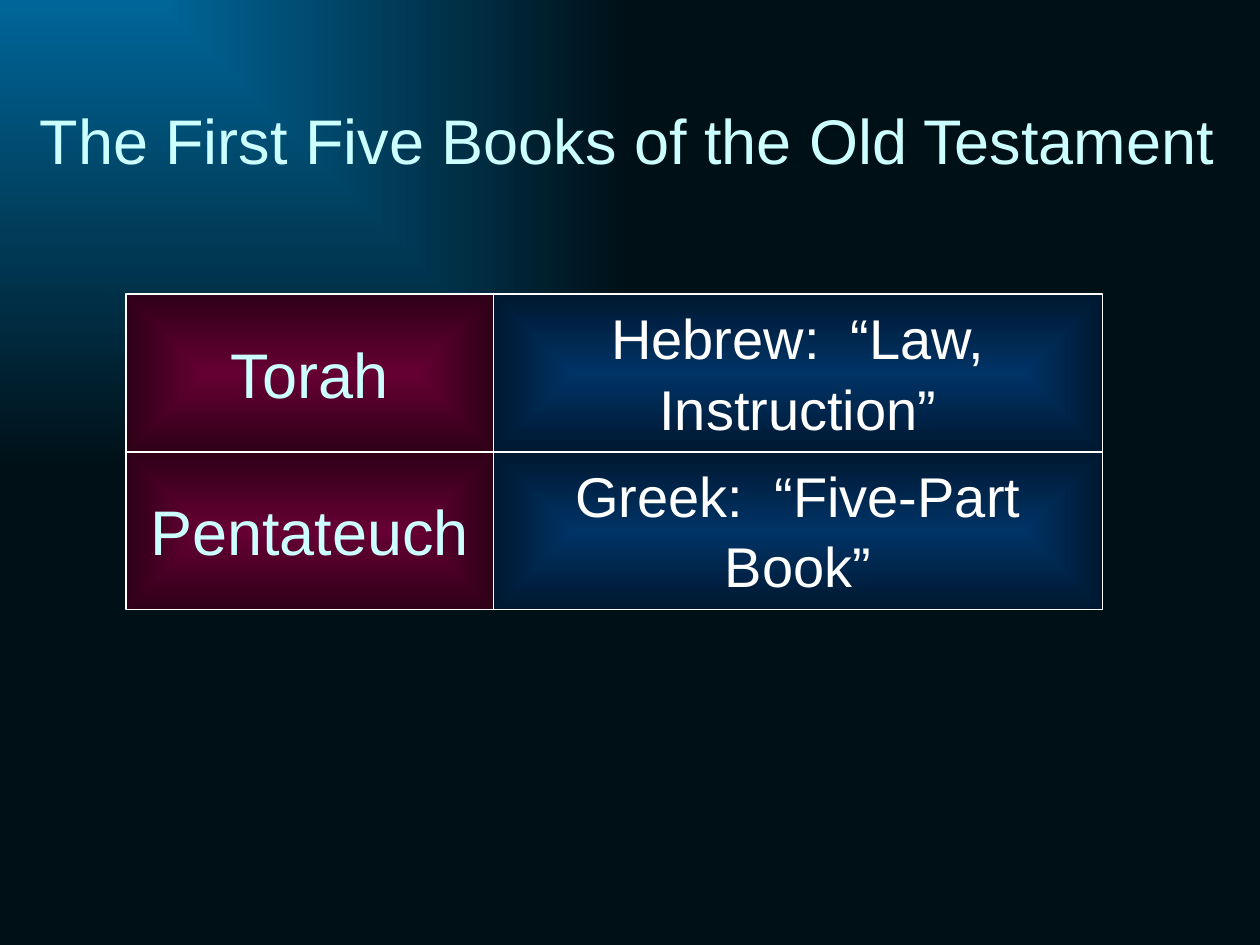
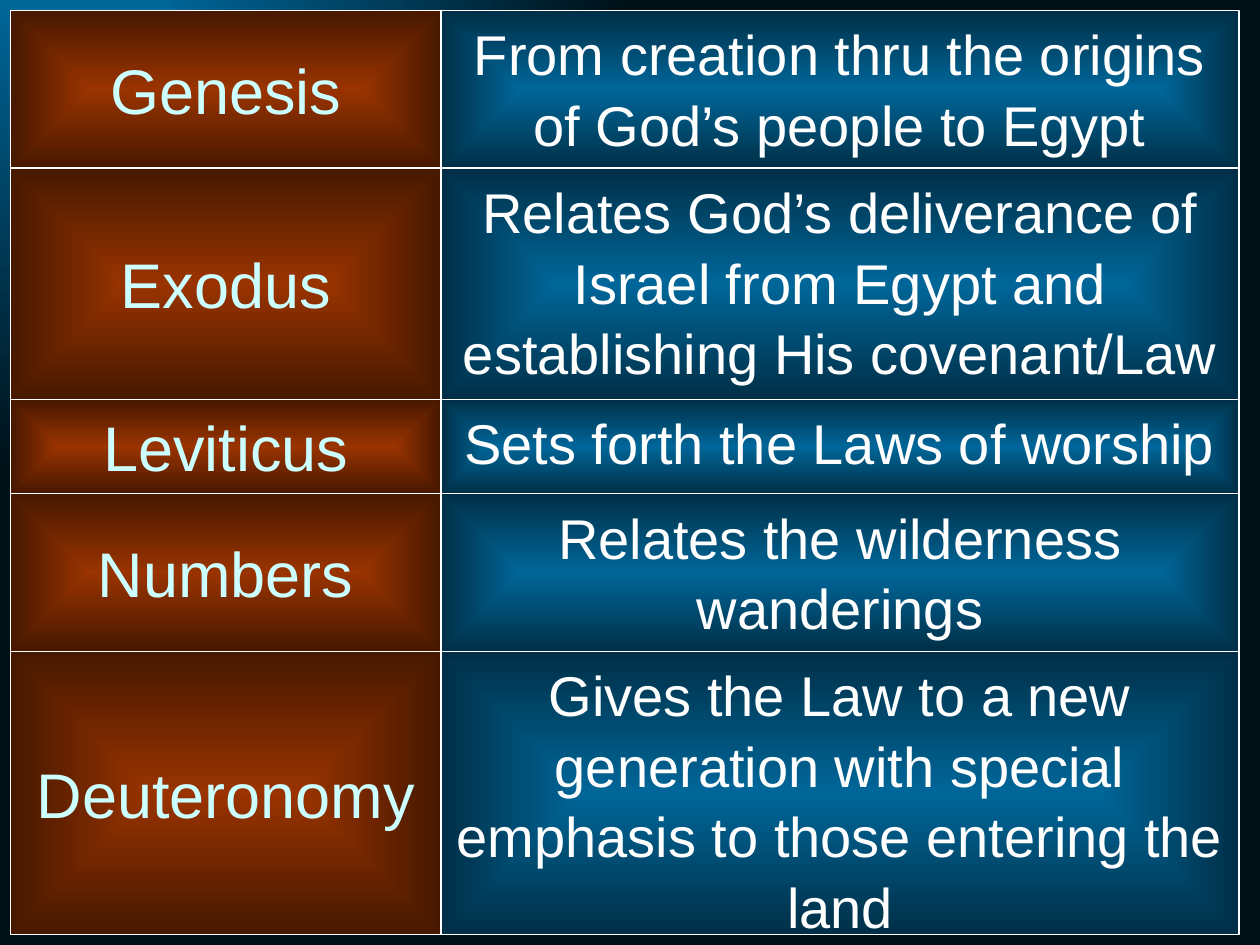
from lxml.etree import SubElement
from pptx import Presentation
from pptx.dml.color import RGBColor
from pptx.enum.shapes import MSO_SHAPE
from pptx.enum.text import MSO_ANCHOR, MSO_AUTO_SIZE, PP_ALIGN
from pptx.oxml.ns import qn
from pptx.util import Cm, Pt

TITLE_ONLY, BLANK = 5, 6
BACKGROUND = ("006699", "001017")
MAROON = ("660033", "2F0018")
NAVY = ("003366", "001830")
RUST = ("993300", "471800")
BLUE = ("006699", "002F47")
LINE_COLOR = "FFFFFF"

TERM_STYLE = {"size": Pt(36), "color": "CCFFFF", "anchor": MSO_ANCHOR.MIDDLE, "spacing": 1.0}
MEANING_STYLE = {"size": Pt(32), "color": "FFFFFF", "anchor": MSO_ANCHOR.TOP, "spacing": 1.05}

TERMS = [
    ("Torah", "Hebrew:  “Law, Instruction”", 3.18),
    ("Pentateuch", "Greek:  “Five-Part Book”", 3.18),
]
BOOKS = [
    ("Genesis", "From creation thru the origins of God’s people to Egypt", 3.18),
    ("Exodus", "Relates God’s deliverance of Israel from Egypt "
               "and establishing His covenant/Law", 4.66),
    ("Leviticus", "Sets forth the Laws of worship", 1.9),
    ("Numbers", "Relates the wilderness wanderings", 3.18),
    ("Deuteronomy", "Gives the Law to a new generation with special "
                    "emphasis to those entering the land", 5.71),
]


def rgb(color):
    return RGBColor.from_string(color)


def set_path_gradient(fill, element, colors, path_kind, focus):
    """Fill with two colours spreading from focus (left, top, right, bottom in percent)."""
    fill.gradient()
    for stop, color, position in zip(fill.gradient_stops, colors, (0, 1)):
        stop.color.rgb = rgb(color)
        stop.position = position
    gradient = element.find(".//" + qn("a:gradFill"))
    gradient.remove(gradient.find(qn("a:lin")))
    path_element = SubElement(gradient, qn("a:path"))
    path_element.set("path", path_kind)
    focus_rectangle = SubElement(path_element, qn("a:fillToRect"))
    for side, percent in zip("ltrb", focus):
        focus_rectangle.set(side, str(percent * 1000))


def write_text(shape, text, style, wrap=True):
    frame = shape.text_frame
    frame.text = text
    frame.auto_size = MSO_AUTO_SIZE.NONE
    frame.word_wrap = wrap
    frame.vertical_anchor = style["anchor"]
    paragraph = frame.paragraphs[0]
    paragraph.alignment = PP_ALIGN.CENTER
    paragraph.line_spacing = style["spacing"]
    font = paragraph.runs[0].font
    for name, value in {"name": "Arial", "size": style["size"]}.items():
        setattr(font, name, value)
    font.color.rgb = rgb(style["color"])


def add_title(slide, text):
    title = slide.shapes.title
    position = {"left": 0.43, "top": 1.9, "width": 24.43, "height": 1.8}
    for name, value in position.items():
        setattr(title, name, Cm(value))
    write_text(title, text, TERM_STYLE, wrap=False)


def add_panel(slide, text, box, colors, style):
    panel = slide.shapes.add_shape(MSO_SHAPE.RECTANGLE, *(Cm(length) for length in box))
    panel.shadow.inherit = False
    set_path_gradient(panel.fill, panel.element, colors, "shape", (50, 50, 50, 50))
    panel.line.color.rgb = rgb(LINE_COLOR)
    panel.line.width = Pt(0.75)
    write_text(panel, text, style)


def add_panel_rows(slide, rows, left, top, widths, term_colors, meaning_colors):
    """Stack rows of a term panel and its meaning panel."""
    term_width, meaning_width = widths
    for term, meaning, height in rows:
        add_panel(slide, term, (left, top, term_width, height), term_colors, TERM_STYLE)
        add_panel(slide, meaning, (left + term_width, top, meaning_width, height),
                  meaning_colors, MEANING_STYLE)
        top += height


def main():
    presentation = Presentation()
    presentation.slide_width = Cm(25.4)
    presentation.slide_height = Cm(19.05)
    master = presentation.slide_master
    set_path_gradient(master.background.fill, master.element, BACKGROUND,
                      "rect", (0, 0, 100, 100))
    layouts = presentation.slide_layouts

    terms_slide = presentation.slides.add_slide(layouts[TITLE_ONLY])
    add_title(terms_slide, "The First Five Books of the Old Testament")
    add_panel_rows(terms_slide, TERMS, 2.54, 5.93, (7.41, 12.28), MAROON, NAVY)

    books_slide = presentation.slides.add_slide(layouts[BLANK])
    add_panel_rows(books_slide, BOOKS, 0.21, 0.21, (8.68, 16.09), RUST, BLUE)

    presentation.save("out.pptx")


if __name__ == "__main__":
    main()
